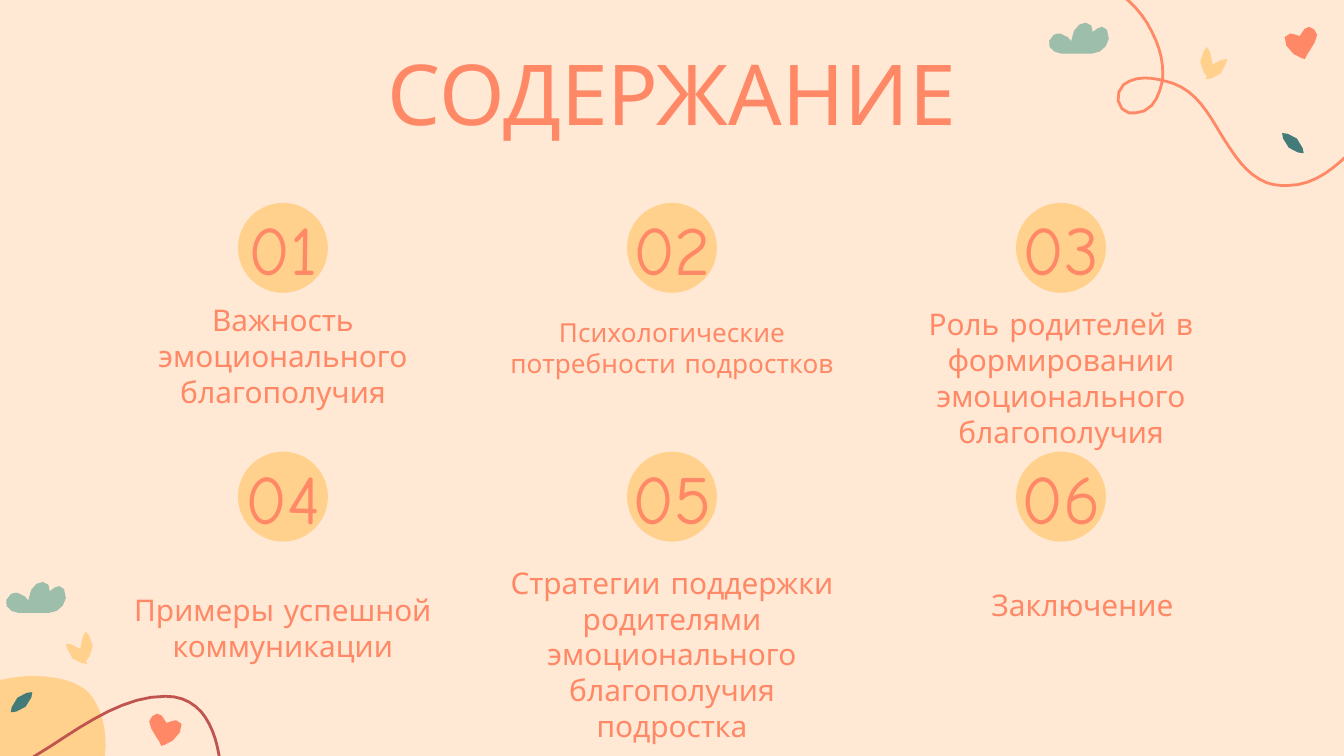
import dataclasses
import math

import pptx
import pptx.dml.color
import pptx.enum.shapes
import pptx.enum.text
import pptx.util


@dataclasses.dataclass(frozen=True)
class Theme:
    font: str = "Comic Neue"
    paper: str = "FFE8D4"
    coral: str = "FF8966"
    sand: str = "FFD18D"
    sage: str = "9DBEAA"
    teal: str = "437B78"
    brick: str = "C05550"
    heading_size: float = 45
    number_size: float = 37
    label_size: float = 16
    small_label_size: float = 14
    swirl_width: float = 1.5


THEME = Theme()
CENTRE = pptx.enum.text.PP_ALIGN.CENTER
TOP = pptx.enum.text.MSO_ANCHOR.TOP
MIDDLE = pptx.enum.text.MSO_ANCHOR.MIDDLE
OVAL = pptx.enum.shapes.MSO_SHAPE.OVAL

# Outlines in points: a start, then corners (x, y) or Bezier curves
# (control, control, end)
CLOUD = [(20, 0), (16.5, 0, 13, 3, 12.2, 10), (12.2, 10, 10, 5.8, 6.5, 5.8),
         (5, 5.8, 4.3, 5.8, 2.9, 6.5), (0, 8.6, 0, 10.8, 0.7, 13),
         (2.2, 15.1, 4.3, 16.6, 7.2, 16.6), (23, 16.6),
         (28, 16.6, 31.7, 13, 32.4, 8.6), (32.4, 4.3, 31, 2.2, 28.8, 2.2),
         (27.4, 2.2, 25.2, 3.6, 23.8, 5), (24.5, 2.2, 22.3, 0, 20, 0)]
LEAF = [(0, 0), (0, 0, 5, 0, 7.9, 2.9), (11.5, 6.5, 11.5, 10.8, 11.5, 10.8),
        (11.5, 10.8, 6.5, 10.8, 3.6, 7.9), (0, 5, 0, 0, 0, 0)]
HEART = [(14.4, 0), (16.6, 0, 18, 2.2, 18.7, 4.3),
         (18.7, 6.5, 16.6, 10, 15.1, 12.2),
         (13.7, 13.7, 13, 15.8, 12.2, 17.3), (12.2, 17.3, 5, 15.8, 2.2, 10),
         (0, 6.5, 1.4, 3.6, 4.3, 3.6), (5.8, 3.6, 7.2, 4.3, 9.4, 5),
         (10.8, 1.4, 13, 0, 14.4, 0)]
SPRIG = [(3.6, 0), (3.6, 0, 0, 3.6, 0, 7.9), (0, 12.2, 3.6, 15.8, 3.6, 15.8),
         (2.9, 17.3), (2.9, 17.3, 7.9, 17.3, 10.8, 14.4),
         (13.7, 10.8, 14.4, 6.5, 14.4, 6.5),
         (14.4, 6.5, 9.4, 6.5, 6.5, 9.4), (6.5, 7.9),
         (6.5, 3.6, 3.6, 0, 3.6, 0)]
HILL = [(18, 362.2), (12.2, 362.2, 6.5, 362.9, 0, 364.3), (0, 405),
        (56.2, 405), (57.6, 394, 55.4, 382.3, 49.7, 373.7),
        (44.6, 366, 32.4, 362.2, 18, 362.2)]
TOP_SWIRL = [(587.2, -10.8), (600.5, -5, 611.3, 5, 617, 16.9),
             (622.1, 26.6, 623.5, 35.3, 622.8, 43.2),
             (621.4, 49, 619.9, 53.3, 617, 56.5),
             (614.2, 59, 612, 60.5, 608.4, 60.5), (604.8, 60.5),
             (601.9, 59.8, 599.8, 57.6, 599, 54),
             (598.3, 51.1, 599.8, 47.5, 601.9, 45.4),
             (604.8, 43.2, 608.4, 41.8, 613.4, 41.8),
             (618.5, 41.8, 623.5, 43.2, 628.2, 44.6),
             (640.8, 49, 647.3, 60.5, 654.1, 72),
             (661, 82.8, 667.4, 93.6, 678.6, 97.9),
             (682.6, 99.4, 686.2, 99.4, 689.8, 99.4),
             (704.9, 99.4, 716.4, 88.6, 724.3, 80.6)]
BOTTOM_SWIRL = [(117.4, 405), (115.8, 395, 112.5, 387, 108, 381.6),
                (103, 375.8, 96.5, 373, 88.6, 373),
                (67.7, 373, 48.2, 385.9, 27.4, 399.6), (18, 405.4)]

# Motif, colour, mirror width, place at the top, place at the bottom.
# The bottom set is mirrored, except the cloud.
MOTIFS = [
    (CLOUD, THEME.sage, None, (561.6, 12.2), (2.9, 311.8)),
    (LEAF, THEME.teal, 11.5, (686.9, 71.3), (5.8, 370.8)),
    (HEART, THEME.coral, 18.7, (686.9, 14.4), (79.9, 382.3)),
    (SPRIG, THEME.sand, 14.4, (643, 25.2), (35.3, 338.4)),
]

# Label, type size, height, shift right, shift down
TOPICS = [
    ("Важность эмоционального благополучия", THEME.label_size, 55.4, 0, 0),
    ("Психологические потребности подростков",
     THEME.small_label_size, 46.8, 0, 0),
    ("Роль родителей в формировании эмоционального благополучия",
     THEME.label_size, 79.2, 0, 0),
    ("Примеры успешной коммуникации", THEME.label_size, 80.6, 0, 0),
    ("Стратегии поддержки родителями эмоционального благополучия подростка",
     THEME.label_size, 108.7, 0, 0),
    ("Заключение", THEME.label_size, 44.6, 11.5, 5.8),
]
COLUMNS, COLUMN_PITCH, ROW_PITCH = 3, 208.4, 133.3
FIRST_CENTRE, FIRST_TOP = 151.6, 108.7
TOPIC_WIDTH, BADGE_SIZE = 190, 48.2


def rgb(colour):
    return pptx.dml.color.RGBColor.from_string(colour)


def trace(outline):
    """Turn corners and Bezier curves into points, more on longer curves."""
    points = [outline[0]]
    for piece in outline[1:]:
        if len(piece) == 2:
            points.append(piece)
            continue
        x0, y0 = points[-1]
        x1, y1, x2, y2, x3, y3 = piece
        steps = min(8, max(2, math.ceil(math.dist((x0, y0), (x3, y3)) / 5)))
        for step in range(1, steps + 1):
            t = step / steps
            a, b, c, d = (1 - t)**3, 3*t*(1 - t)**2, 3*t*t*(1 - t), t**3
            points.append((a*x0 + b*x1 + c*x2 + d*x3,
                           a*y0 + b*y1 + c*y2 + d*y3))
    return points


def add_outline(slide, outline, place=(0, 0), mirror=None, closed=True):
    points = [(pptx.util.Pt(place[0] + (x if mirror is None else mirror - x)),
               pptx.util.Pt(place[1] + y)) for x, y in trace(outline)]
    builder = slide.shapes.build_freeform(*points[0])
    builder.add_line_segments(points[1:], close=closed)
    return builder.convert_to_shape()


def paint(figure, colour):
    figure.shadow.inherit = False
    figure.fill.solid()
    figure.fill.fore_color.rgb = rgb(colour)
    figure.line.fill.background()


def add_swirl(slide, outline, colour):
    swirl = add_outline(slide, outline, closed=False)
    swirl.shadow.inherit = False
    swirl.fill.background()
    swirl.line.color.rgb = rgb(colour)
    swirl.line.width = pptx.util.Pt(THEME.swirl_width)


def add_words(slide, words, box, size, anchor=MIDDLE):
    frame = slide.shapes.add_textbox(*map(pptx.util.Pt, box)).text_frame
    inset = pptx.util.Pt(7.2)
    frame_format = {"word_wrap": True, "vertical_anchor": anchor,
                    "margin_left": inset, "margin_right": inset,
                    "margin_top": inset, "margin_bottom": inset}
    for key, value in frame_format.items():
        setattr(frame, key, value)
    paragraph = frame.paragraphs[0]
    paragraph.alignment = CENTRE
    run = paragraph.add_run()
    run.text = words
    run_format = {"name": THEME.font, "size": pptx.util.Pt(size)}
    for key, value in run_format.items():
        setattr(run.font, key, value)
    run.font.color.rgb = rgb(THEME.coral)


def add_topic(slide, index, label, size, height, shift_x, shift_y):
    row, column = divmod(index, COLUMNS)
    centre = FIRST_CENTRE + column * COLUMN_PITCH
    top = FIRST_TOP + row * ROW_PITCH
    left = centre - TOPIC_WIDTH / 2
    badge_box = (centre - BADGE_SIZE / 2, top, BADGE_SIZE, BADGE_SIZE)
    paint(slide.shapes.add_shape(OVAL, *map(pptx.util.Pt, badge_box)),
          THEME.sand)
    add_words(slide, f"{index + 1:02}", (left, top + 7.9, TOPIC_WIDTH, 32.4),
              THEME.number_size)
    add_words(slide, label,
              (left + shift_x, top + 54 + shift_y, TOPIC_WIDTH, height), size)


def main():
    deck = pptx.Presentation()
    deck.slide_width, deck.slide_height = pptx.util.Pt(720), pptx.util.Pt(405)
    slide = deck.slides.add_slide(deck.slide_layouts[6])
    slide.background.fill.solid()
    slide.background.fill.fore_color.rgb = rgb(THEME.paper)

    # Corner decorations
    paint(add_outline(slide, HILL), THEME.sand)
    add_swirl(slide, BOTTOM_SWIRL, THEME.brick)
    add_swirl(slide, TOP_SWIRL, THEME.coral)
    for motif, colour, mirror, top_place, bottom_place in MOTIFS:
        paint(add_outline(slide, motif, top_place), colour)
        paint(add_outline(slide, motif, bottom_place, mirror), colour)

    # Heading and numbered topics
    add_words(slide, "СОДЕРЖАНИЕ", (56.7, 15.1, 606.6, 74.2),
              THEME.heading_size, TOP)
    for index, topic in enumerate(TOPICS):
        add_topic(slide, index, *topic)

    deck.save("out.pptx")


if __name__ == "__main__":
    main()
